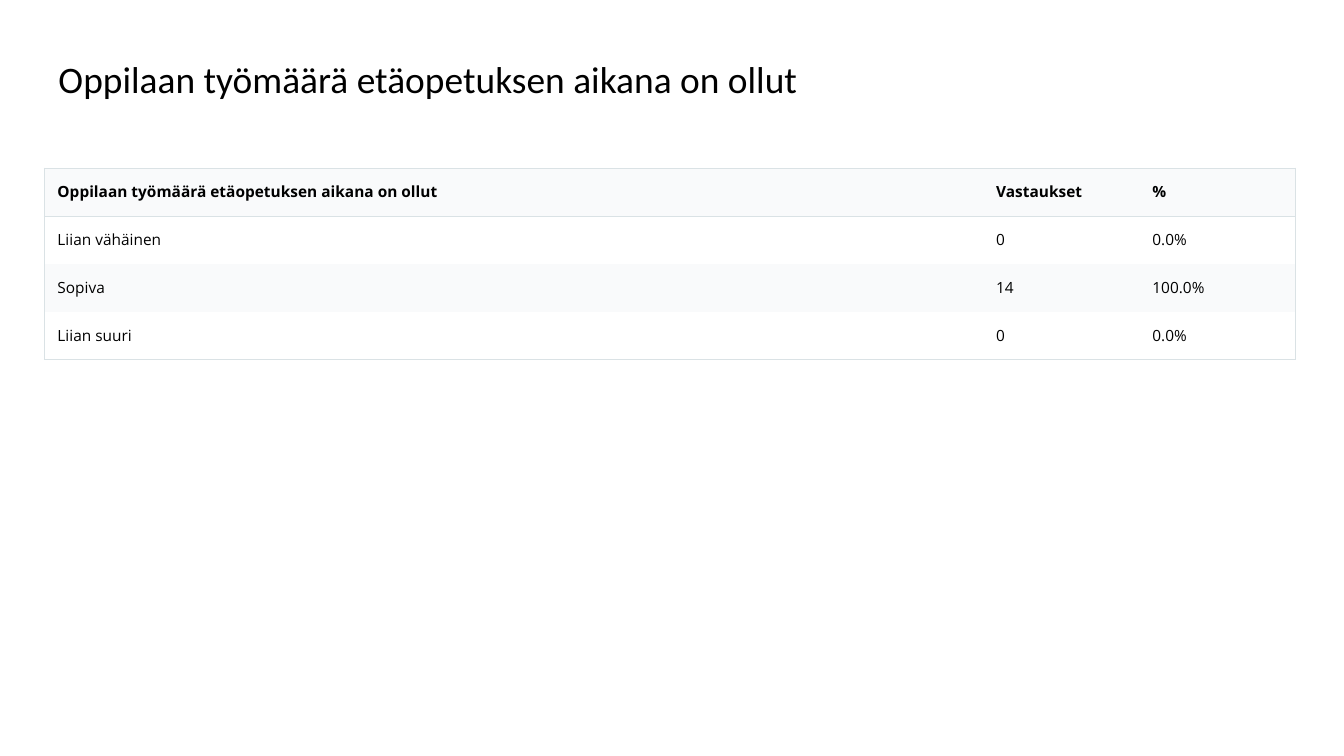
from dataclasses import dataclass

from lxml import etree
from pptx import Presentation
from pptx import util as u
from pptx.dml.color import RGBColor
from pptx.enum import text
from pptx.oxml.ns import qn


@dataclass(frozen=True)
class Theme:
    ink: str = "000000"
    stripe: str = "F9FAFB"
    plain: str = "FFFFFF"
    rule: str = "DAE2E5"
    title_font: str = "Calibri"
    table_font: str = "Open Sans"
    title_size: float = 26.7
    table_size: float = 11


theme = Theme()
INSET = u.Inches(0.13)


def write(para, words, font, size, bold=False):
    span = para.add_run()
    span.text = words
    span.font.name = font
    span.font.size = u.Pt(size)
    span.font.bold = bold
    span.font.color.rgb = RGBColor.from_string(theme.ink)


def set_borders(cell, visible):
    """Rule the sides named in visible (L, R, T, B) and clear the others."""
    props = cell._tc.get_or_add_tcPr()
    for place, side in enumerate("LRTB"):
        line = etree.Element(qn(f"a:ln{side}"), w=str(u.Pt(1)))
        if side in visible:
            fill = etree.SubElement(line, qn("a:solidFill"))
            etree.SubElement(fill, qn("a:srgbClr"), val=theme.rule)
        else:
            etree.SubElement(line, qn("a:noFill"))
        props.insert(place, line)


deck = Presentation()
deck.slide_width, deck.slide_height = u.Inches(13.33), u.Inches(7.5)
page = deck.slides.add_slide(deck.slide_layouts[5])

# Title
title = page.shapes.title
title.left, title.top = u.Inches(0.45), u.Inches(0.39)
title.width, title.height = u.Inches(12.42), u.Inches(0.84)
frame = title.text_frame
frame.word_wrap = True
frame.auto_size = text.MSO_AUTO_SIZE.NONE
frame.vertical_anchor = text.MSO_ANCHOR.MIDDLE
frame.margin_left = frame.margin_right = INSET
frame.margin_top = frame.margin_bottom = INSET
para = frame.paragraphs[0]
para.alignment = text.PP_ALIGN.LEFT
para.line_spacing = 0.9
write(para, "Oppilaan työmäärä etäopetuksen aikana on ollut",
      theme.title_font, theme.title_size)

# Answer table: a ruled header above striped rows in an outer frame
answers = [
    ("Oppilaan työmäärä etäopetuksen aikana on ollut", "Vastaukset", "%"),
    ("Liian vähäinen", "0", "0.0%"),
    ("Sopiva", "14", "100.0%"),
    ("Liian suuri", "0", "0.0%"),
]
widths = (9.31, 1.55, 1.55)
last_row, last_col = len(answers) - 1, len(widths) - 1
table = page.shapes.add_table(
    len(answers), len(widths), u.Inches(0.44), u.Inches(1.67),
    u.Inches(sum(widths)), u.Inches(1.9)).table
for column, width in zip(table.columns, widths):
    column.width = u.Inches(width)

for r, answer in enumerate(answers):
    for c, words in enumerate(answer):
        cell = table.cell(r, c)
        cell.margin_left = cell.margin_right = INSET
        cell.margin_top = cell.margin_bottom = INSET
        cell.fill.solid()
        cell.fill.fore_color.rgb = RGBColor.from_string(
            theme.plain if r % 2 else theme.stripe)
        visible = ("L" if c == 0 else "") + ("R" if c == last_col else "")
        visible += ("T" if r <= 1 else "") + ("B" if r in (0, last_row) else "")
        set_borders(cell, visible)
        write(cell.text_frame.paragraphs[0], words,
              theme.table_font, theme.table_size, bold=r == 0)

deck.save("out.pptx")
